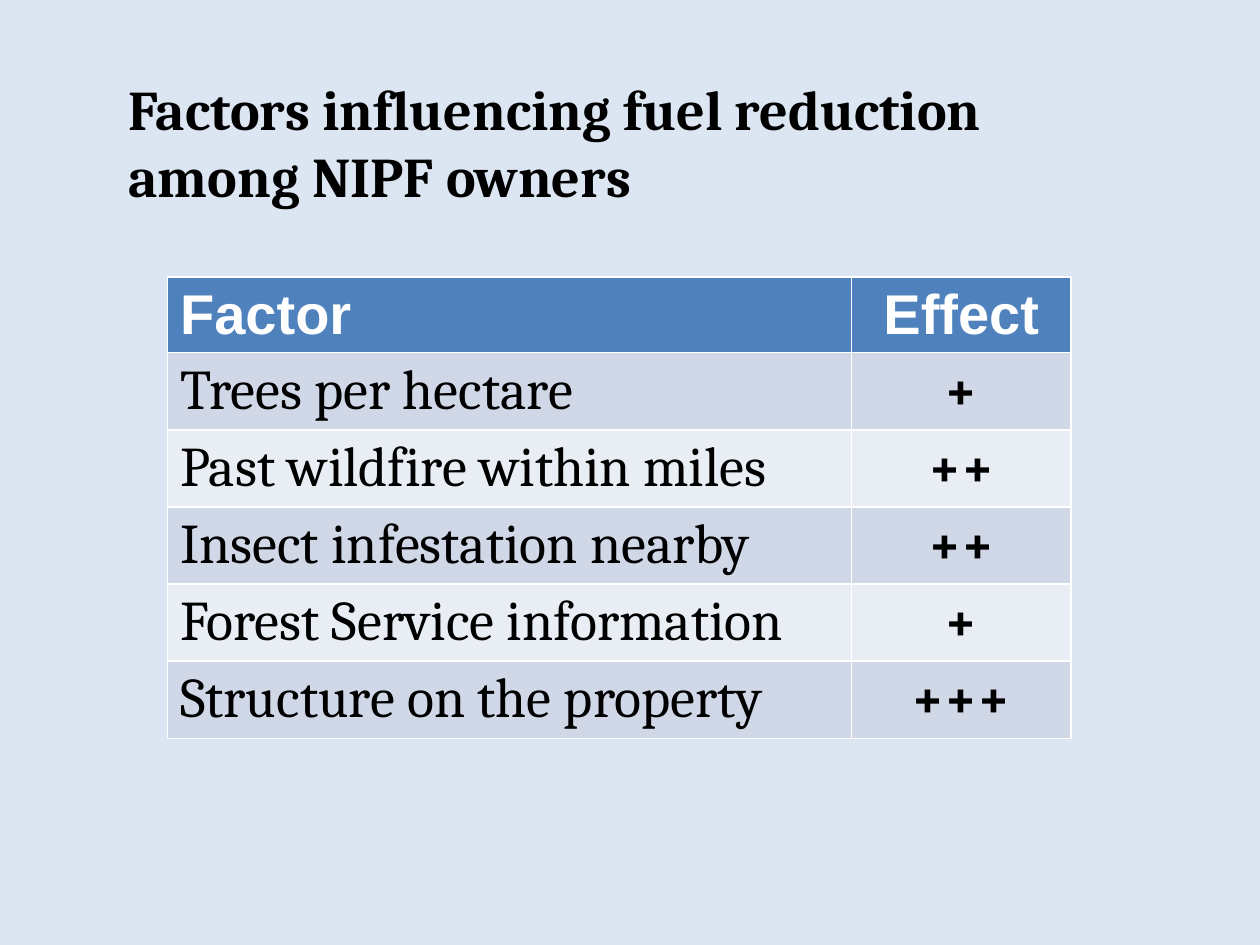
from dataclasses import dataclass

from pptx import Presentation
from pptx.dml.color import RGBColor as RGB
from pptx.enum.text import MSO_ANCHOR as Anchor, PP_ALIGN as Align
from pptx.util import Inches, Pt


@dataclass(frozen=True)
class Theme:
    """Colours, fonts and type size of the slide."""
    background: RGB = RGB(0xDC, 0xE6, 0xF2)
    header: RGB = RGB(0x4F, 0x81, 0xBD)
    bands: tuple = (RGB(0xD0, 0xD8, 0xE8), RGB(0xE9, 0xED, 0xF4))
    light: RGB = RGB(0xFF, 0xFF, 0xFF)
    dark: RGB = RGB(0, 0, 0)
    serif: str = "Cambria"
    sans: str = "Arial"
    size: Pt = Pt(32)


THEME = Theme()
TITLE = ("Factors influencing fuel reduction", "among NIPF owners")
FACTORS = (
    ("Factor", "Effect"),
    ("Trees per hectare", "+"),
    ("Past wildfire within miles", "++"),
    ("Insect infestation nearby", "++"),
    ("Forest Service information", "+"),
    ("Structure on the property", "+++"),
)
COLUMN_WIDTHS = (5.43, 1.74)
ROW_HEIGHT = 0.53


def style(p, name, color, bold, align):
    """Format one paragraph."""
    p.alignment = align
    font = p.font
    font.name, font.size, font.bold = name, THEME.size, bold
    font.color.rgb = color


def add_title(s, left, top, width, height):
    """Place the two-line title in its placeholder."""
    title = s.shapes.title
    title.left, title.top = Inches(left), Inches(top)
    title.width, title.height = Inches(width), Inches(height)
    tf = title.text_frame
    tf.vertical_anchor = Anchor.MIDDLE
    p = tf.paragraphs[0]
    p.add_run().text = TITLE[0]
    p.add_line_break()
    p.add_run().text = TITLE[1]
    style(p, THEME.serif, THEME.dark, True, Align.LEFT)


def add_factor_table(s, left, top):
    """Place the banded table of factors and effects."""
    table = s.shapes.add_table(
        len(FACTORS), len(COLUMN_WIDTHS), Inches(left), Inches(top),
        Inches(sum(COLUMN_WIDTHS)), Inches(ROW_HEIGHT * len(FACTORS))).table
    for column, width in zip(table.columns, COLUMN_WIDTHS):
        column.width = Inches(width)
    for i, row in enumerate(FACTORS):
        is_header = i == 0
        for j, text in enumerate(row):
            cell = table.cell(i, j)
            cell.fill.solid()
            cell.fill.fore_color.rgb = THEME.header if is_header else THEME.bands[(i - 1) % 2]
            cell.text = text
            style(cell.text_frame.paragraphs[0],
                  THEME.sans if is_header else THEME.serif,
                  THEME.light if is_header else THEME.dark,
                  is_header or j == 1,
                  Align.CENTER if j == 1 else Align.LEFT)


def main():
    """Build and save the slide."""
    prs = Presentation()
    prs.slide_width, prs.slide_height = Inches(10), Inches(7.5)
    s = prs.slides.add_slide(prs.slide_layouts[5])
    s.background.fill.solid()
    s.background.fill.fore_color.rgb = THEME.background
    add_factor_table(s, 1.33, 2.2)
    add_title(s, 0.92, 0.5, 9, 1.25)
    prs.save("out.pptx")


if __name__ == "__main__":
    main()
